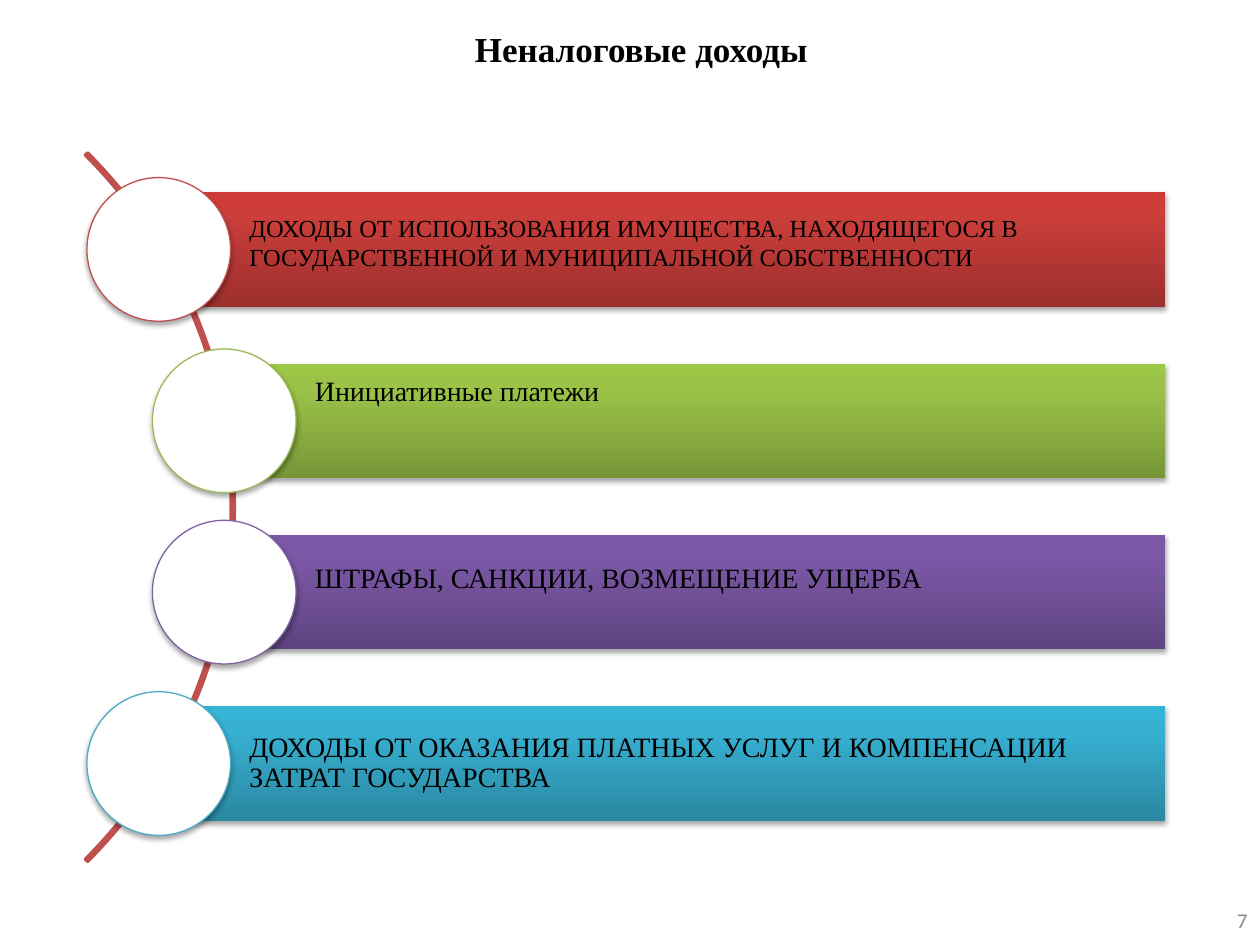
from lxml import etree
from pptx import Presentation
from pptx.dml.color import RGBColor
from pptx.enum.shapes import MSO_SHAPE
from pptx.enum.text import MSO_ANCHOR, PP_ALIGN
from pptx.oxml import parse_xml
from pptx.oxml.ns import qn
from pptx.util import Inches, Pt

DRAWING_NS = "http://schemas.openxmlformats.org/drawingml/2006/main"
SERIF = "Times New Roman"
PITCH = 1.36
BAR_HEIGHT = 0.91
DISC = 1.14
INDENTS = [0, 0.52, 0.52, 0]

# wording, size, line spacing, bottom inset, gradient from bottom to top, accent
INCOMES = [
    ("ДОХОДЫ ОТ ИСПОЛЬЗОВАНИЯ ИМУЩЕСТВА, НАХОДЯЩЕГОСЯ В "
     "ГОСУДАРСТВЕННОЙ И МУНИЦИПАЛЬНОЙ СОБСТВЕННОСТИ",
     14, 1.0, 0.16, ["9C2F2D", "CB3E3A", "CE3B37"], "C0504D"),
    ("Инициативные платежи",
     16, 1.0, 0.53, ["779737", "9BC348", "9DC746"], "9BBB59"),
    ("ШТРАФЫ, САНКЦИИ, ВОЗМЕЩЕНИЕ УЩЕРБА",
     16, 1.0, 0.27, ["5F4480", "7B58A6", "7C57A8"], "8064A2"),
    ("ДОХОДЫ ОТ ОКАЗАНИЯ ПЛАТНЫХ УСЛУГ И КОМПЕНСАЦИИ ЗАТРАТ ГОСУДАРСТВА",
     16, 0.9, 0.04, ["2A88A2", "37B1D2", "34B4D6"], "4BACC6"),
]


def color(hex_value):
    return RGBColor.from_string(hex_value)


def add_preset(slide, preset, left, top, width, height):
    shape = slide.shapes.add_shape(
        preset, Inches(left), Inches(top), Inches(width), Inches(height))
    shape.shadow.inherit = False
    return shape


def drop_shadow(shape):
    effects = shape._element.spPr.find(qn("a:effectLst"))
    shadow = etree.SubElement(
        effects, qn("a:outerShdw"), blurRad=str(Pt(3.1)), dist=str(Pt(1.8)),
        dir="5400000", rotWithShape="0")
    black = etree.SubElement(shadow, qn("a:srgbClr"), val="000000")
    etree.SubElement(black, qn("a:alpha"), val="35000")


def gradient_fill(shape, colors):
    """Fill from bottom to top with stops at 0, 80 and 100 percent."""
    stops = "".join(
        f'<a:gs pos="{percent * 1000}"><a:srgbClr val="{stop}"/></a:gs>'
        for percent, stop in zip((0, 80, 100), colors))
    gradient = parse_xml(
        f'<a:gradFill xmlns:a="{DRAWING_NS}" rotWithShape="1">'
        f'<a:gsLst>{stops}</a:gsLst><a:lin ang="16200000" scaled="0"/></a:gradFill>')
    shape._element.spPr.find(qn("a:prstGeom")).addnext(gradient)


def write(shape, wording, size, font, ink="000000", bold=False,
          align=PP_ALIGN.LEFT, anchor=MSO_ANCHOR.MIDDLE):
    frame = shape.text_frame
    frame.word_wrap = True
    frame.vertical_anchor = anchor
    paragraph = frame.paragraphs[0]
    paragraph.text = wording
    paragraph.alignment = align
    paragraph.font.size = Pt(size)
    paragraph.font.name = font
    paragraph.font.bold = bold
    paragraph.font.color.rgb = color(ink)
    return frame


def add_label(slide, left, top, width, height, *args, **style):
    box = slide.shapes.add_textbox(
        Inches(left), Inches(top), Inches(width), Inches(height))
    write(box, *args, **style)


def add_arc(slide, left, top, diameter):
    arc = add_preset(slide, MSO_SHAPE.BLOCK_ARC, left, top, diameter, diameter)
    for index, value in enumerate((189, 27, 0.003)):
        arc.adjustments[index] = value
    arc.fill.background()
    arc.line.color.rgb = color("C0504D")
    arc.line.width = Pt(2)


def add_income(slide, left, top, right, income):
    """Draw a bar up to the right edge, with a disc over its left end."""
    wording, size, spacing, bottom_inset, gradient, accent = income
    bar_left = left + DISC / 2
    bar = add_preset(slide, MSO_SHAPE.RECTANGLE, bar_left,
                     top + (DISC - BAR_HEIGHT) / 2, right - bar_left, BAR_HEIGHT)
    gradient_fill(bar, gradient)
    bar.line.fill.background()
    drop_shadow(bar)
    frame = write(bar, wording, size, SERIF)
    frame.paragraphs[0].line_spacing = spacing
    frame.margin_left = Inches(0.72)
    frame.margin_top = frame.margin_right = Inches(0.04)
    frame.margin_bottom = Inches(bottom_inset)

    disc = add_preset(slide, MSO_SHAPE.OVAL, left, top, DISC, DISC)
    disc.fill.solid()
    disc.fill.fore_color.rgb = color("FFFFFF")
    disc.line.color.rgb = color(accent)
    disc.line.width = Pt(0.75)
    drop_shadow(disc)


def add_income_list(slide, left, top, right):
    add_arc(slide, left - 6.78, top - 1.36, 7.95)
    for row, (indent, income) in enumerate(zip(INDENTS, INCOMES)):
        add_income(slide, left + indent, top + row * PITCH, right, income)


def main():
    deck = Presentation()
    deck.slide_width, deck.slide_height = Inches(10), Inches(7.5)
    slide = deck.slides.add_slide(deck.slide_layouts[6])
    add_label(slide, 0.53, 0.17, 9.12, 0.83, "Неналоговые доходы", 20, SERIF,
              bold=True, align=PP_ALIGN.CENTER, anchor=MSO_ANCHOR.TOP)
    add_income_list(slide, 0.69, 1.41, 9.25)
    add_label(slide, 7.67, 7.1, 2.33, 0.4, "7", 12, "Calibri", ink="8C8C8C",
              align=PP_ALIGN.RIGHT)
    deck.save("out.pptx")


if __name__ == "__main__":
    main()
